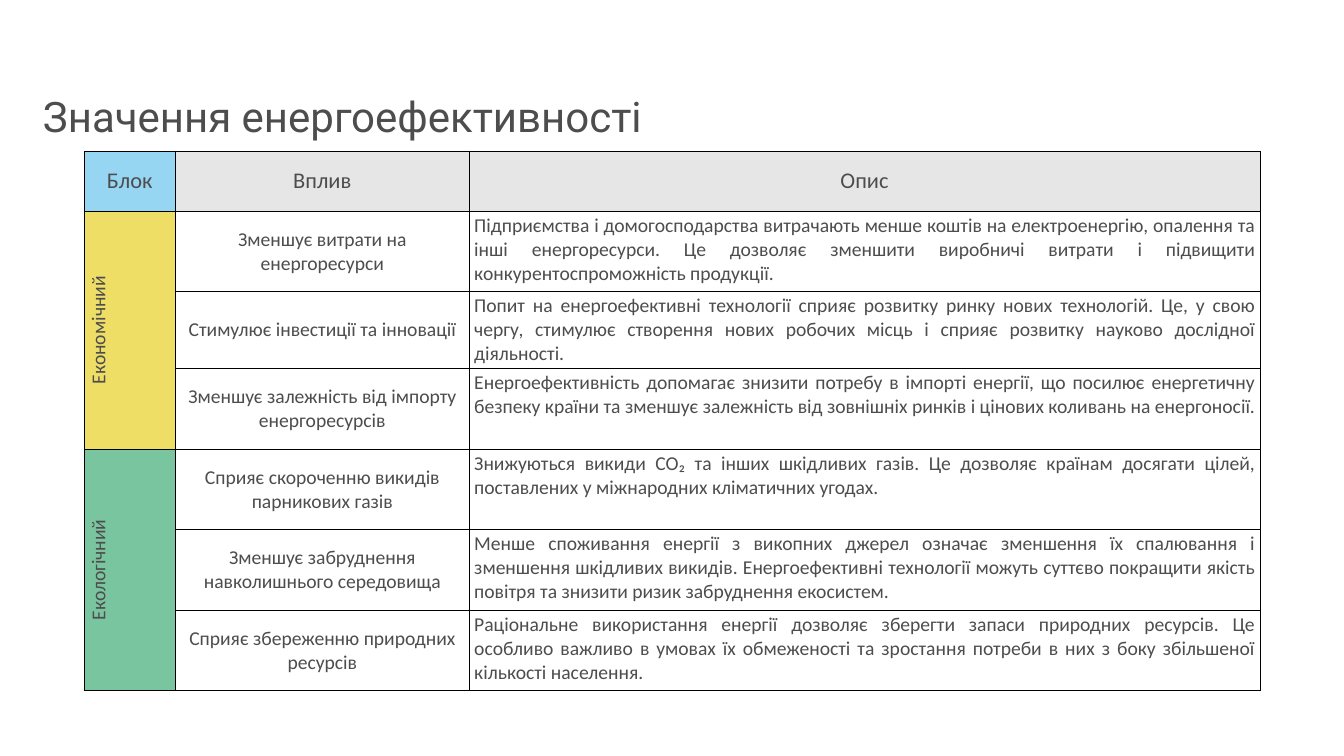
from lxml import etree
from pptx import Presentation
from pptx.dml.color import RGBColor
from pptx.enum import text as t
from pptx.oxml.ns import qn
from pptx.util import Cm, Pt

TITLE = "Значення енергоефективності"
HEAD = [("Блок", "96D6F3"), ("Вплив", "E7E6E6"), ("Опис", "E7E6E6")]
BLOCKS = [
    ("Економічний", "EEDE66", [
        ("Зменшує витрати на енергоресурси",
         "Підприємства і домогосподарства витрачають менше коштів на електроенергію, опалення та "
         "інші енергоресурси. Це дозволяє зменшити виробничі витрати і підвищити "
         "конкурентоспроможність продукції."),
        ("Стимулює інвестиції та інновації",
         "Попит на енергоефективні технології сприяє розвитку ринку нових технологій. Це, у свою "
         "чергу, стимулює створення нових робочих місць і сприяє розвитку науково дослідної "
         "діяльності."),
        ("Зменшує залежність від імпорту енергоресурсів",
         "Енергоефективність допомагає знизити потребу в імпорті енергії, що посилює енергетичну "
         "безпеку країни та зменшує залежність від зовнішніх ринків і цінових коливань на "
         "енергоносії."),
    ]),
    ("Екологічний", "79C59F", [
        ("Сприяє скороченню викидів парникових газів",
         "Знижуються викиди CO₂ та інших шкідливих газів. Це дозволяє країнам досягати цілей, "
         "поставлених у міжнародних кліматичних угодах."),
        ("Зменшує забруднення навколишнього середовища",
         "Менше споживання енергії з викопних джерел означає зменшення їх спалювання і "
         "зменшення шкідливих викидів. Енергоефективні технології можуть суттєво покращити якість "
         "повітря та знизити ризик забруднення екосистем."),
        ("Сприяє збереженню природних ресурсів",
         "Раціональне використання енергії дозволяє зберегти запаси природних ресурсів. Це "
         "особливо важливо в умовах їх обмеженості та зростання потреби в них з боку збільшеної "
         "кількості населення."),
    ]),
]
COLS = [4.6, 14.81, 39.85]
ROWS = [3.02, 4.06, 3.84, 4.06, 4.06, 4.06, 4.06]
LEFT, TOP = 4.24, 7.62
INK, LINE = "4D4D4D", "000000"
MID = t.MSO_ANCHOR.MIDDLE


def rgb(code):
    return RGBColor.from_string(code)


def write(frame, words, size=28, face="Calibri", align=t.PP_ALIGN.CENTER, space=None):
    frame.text = words
    para = frame.paragraphs[0]
    para.alignment = align
    para.line_spacing = space
    font = para.runs[0].font
    font.size, font.name, font.bold = Pt(size), face, False
    font.color.rgb = rgb(INK)


def border(cell):
    props = cell._tc.get_or_add_tcPr()
    for side in ("lnL", "lnR", "lnT", "lnB"):
        line = etree.SubElement(props, qn(f"a:{side}"), w=str(Pt(1)))
        fill = etree.SubElement(line, qn("a:solidFill"))
        etree.SubElement(fill, qn("a:srgbClr"), val=LINE)


def put(cell, words, fill=None, anchor=MID, turn=False, **form):
    write(cell.text_frame, words, **form)
    cell.vertical_anchor = anchor
    if fill:
        cell.fill.solid()
        cell.fill.fore_color.rgb = rgb(fill)
    if turn:
        cell._tc.get_or_add_tcPr().set("vert", "vert270")


def main():
    deck = Presentation()
    deck.slide_width, deck.slide_height = Cm(67.74), Cm(38.1)
    slide = deck.slides.add_slide(deck.slide_layouts[5])

    title = slide.shapes.title
    title.left, title.top, title.width, title.height = Cm(1.91), Cm(4.83), Cm(40.59), Cm(2.29)
    write(title.text_frame, TITLE, size=60, face="Roboto", align=t.PP_ALIGN.LEFT, space=0.9)
    title.text_frame.auto_size = t.MSO_AUTO_SIZE.NONE
    title.text_frame.vertical_anchor = MID

    table = slide.shapes.add_table(len(ROWS), len(COLS), Cm(LEFT), Cm(TOP),
                                   Cm(sum(COLS)), Cm(sum(ROWS))).table
    table.first_row = table.horz_banding = False
    for col, width in zip(table.columns, COLS):
        col.width = Cm(width)
    for row, height in zip(table.rows, ROWS):
        row.height = Cm(height)
    for cell in table.iter_cells():
        border(cell)
        cell.fill.background()

    for col, (words, fill) in enumerate(HEAD):
        put(table.cell(0, col), words, fill, size=32)
    row = 1
    for name, fill, items in BLOCKS:
        table.cell(row, 0).merge(table.cell(row + len(items) - 1, 0))
        put(table.cell(row, 0), name, fill, turn=True)
        for effect, detail in items:
            put(table.cell(row, 1), effect)
            put(table.cell(row, 2), detail, anchor=t.MSO_ANCHOR.TOP, align=t.PP_ALIGN.JUSTIFY)
            row += 1

    deck.save("out.pptx")


if __name__ == "__main__":
    main()
